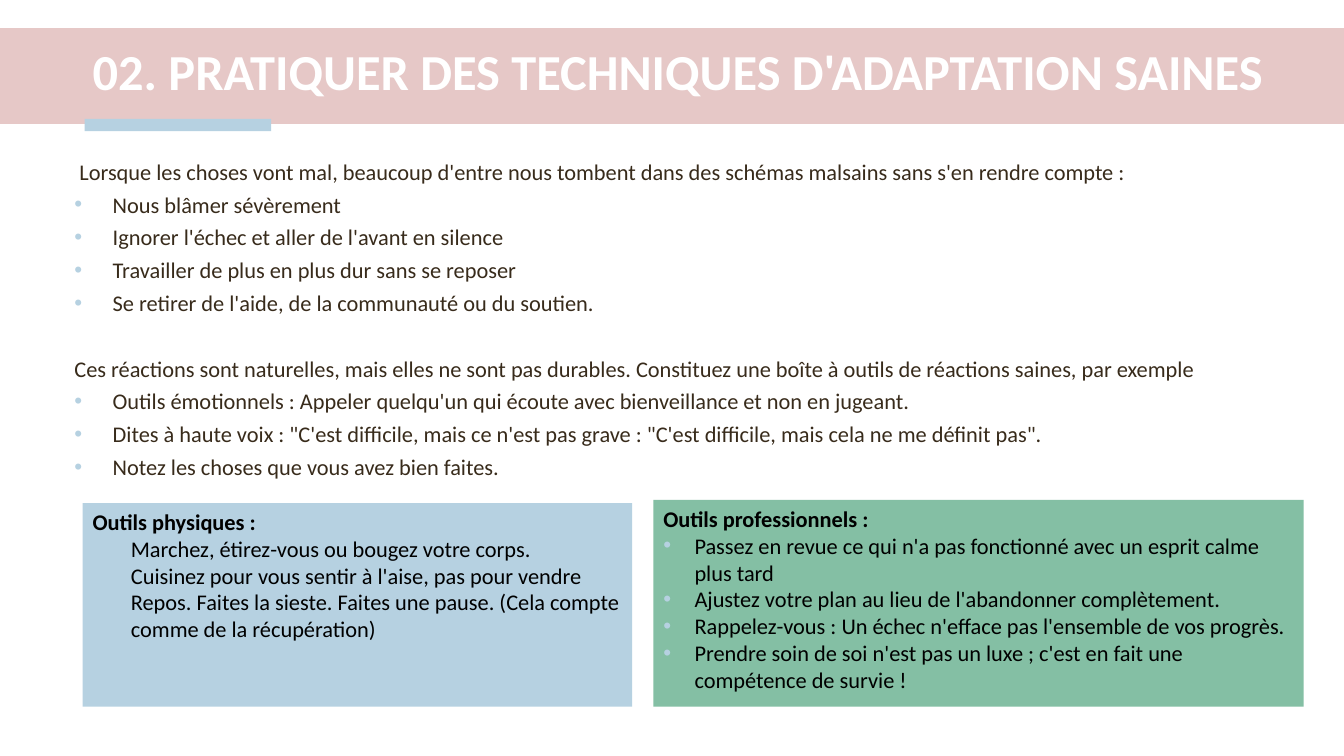
from lxml import etree
from pptx import Presentation
from pptx.dml.color import RGBColor
from pptx.enum.shapes import MSO_SHAPE
from pptx.enum.text import MSO_ANCHOR, PP_ALIGN
from pptx.oxml.ns import qn
from pptx.util import Inches, Pt

COLORS = {
    "band": "E6C8C7",
    "blue": "B6D1E1",
    "green": "84BFA4",
    "white": "FFFFFF",
    "brown": "382B1B",
    "black": "000000",
}
FONT = "Calibri"
TITLE = "02. PRATIQUER DES TECHNIQUES D'ADAPTATION SAINES"
HABITS_INTRO = "Lorsque les choses vont mal, beaucoup d'entre nous tombent dans des schémas malsains sans s'en rendre compte :"
HABITS = [
    "Nous blâmer sévèrement",
    "Ignorer l'échec et aller de l'avant en silence",
    "Travailler de plus en plus dur sans se reposer",
    "Se retirer de l'aide, de la communauté ou du soutien.",
]
TOOLS_INTRO = "Ces réactions sont naturelles, mais elles ne sont pas durables. Constituez une boîte à outils de réactions saines, par exemple"
TOOLS = [
    "Outils émotionnels : Appeler quelqu'un qui écoute avec bienveillance et non en jugeant.",
    "Dites à haute voix : \"C'est difficile, mais ce n'est pas grave : \"C'est difficile, mais cela ne me définit pas\".",
    "Notez les choses que vous avez bien faites.",
]
PHYSICAL = [
    "Marchez, étirez-vous ou bougez votre corps.",
    "Cuisinez pour vous sentir à l'aise, pas pour vendre",
    "Repos. Faites la sieste. Faites une pause. (Cela compte comme de la récupération)",
]
PROFESSIONAL = [
    "Passez en revue ce qui n'a pas fonctionné avec un esprit calme plus tard",
    "Ajustez votre plan au lieu de l'abandonner complètement.",
    "Rappelez-vous : Un échec n'efface pas l'ensemble de vos progrès.",
    "Prendre soin de soi n'est pas un luxe ; c'est en fait une compétence de survie !",
]


def add_rect(s, box, color):
    sp = s.shapes.add_shape(MSO_SHAPE.RECTANGLE, *map(Inches, box))
    sp.shadow.inherit = False
    sp.fill.solid()
    sp.fill.fore_color.rgb = RGBColor.from_string(COLORS[color])
    sp.line.fill.background()
    return sp


def add_text_box(s, box):
    tf = s.shapes.add_textbox(*map(Inches, box)).text_frame
    tf.word_wrap = True
    return tf


def add_paragraph(tf, text, color, size=16, bold=False):
    """Fill the empty first paragraph, or append a new one."""
    p = tf.add_paragraph() if tf.text else tf.paragraphs[0]
    p.text = text
    p.alignment = PP_ALIGN.LEFT
    p.font.name = FONT
    p.font.size = Pt(size)
    p.font.bold = bold
    p.font.color.rgb = RGBColor.from_string(COLORS[color])
    return p


def add_bullet(tf, text, color, indent):
    """Add a paragraph with a hanging blue bullet."""
    p = add_paragraph(tf, text, color)
    pPr = p._p.get_or_add_pPr()
    pPr.set("marL", str(Inches(indent)))
    pPr.set("indent", str(-Inches(indent)))
    bu_color = etree.Element(qn("a:buClr"))
    etree.SubElement(bu_color, qn("a:srgbClr"), val=COLORS["blue"])
    bu_font = etree.Element(qn("a:buFont"), typeface="Arial")
    bu_char = etree.Element(qn("a:buChar"), char="•")
    for position, element in enumerate((bu_color, bu_font, bu_char)):
        pPr.insert(position, element)
    return p


def add_header(s, box):
    """Full-width band with the title and a short accent bar on its lower edge."""
    left, top, width, height = box
    add_rect(s, box, "band")
    add_rect(s, (left + 0.84, top + height - 0.05, 1.85, 0.12), "blue")
    tf = add_text_box(s, (left + 0.82, top + 0.06, 11.93, 0.79))
    tf.vertical_anchor = MSO_ANCHOR.MIDDLE
    p = add_paragraph(tf, TITLE, "white", size=36, bold=True)
    p.line_spacing = 0.9


def add_body(s, box):
    tf = add_text_box(s, box)
    line = Pt(23.4)
    intro = add_paragraph(tf, HABITS_INTRO, "brown")
    intro._p.get_or_add_pPr().set("marL", str(Inches(0.05)))
    for text in HABITS:
        add_bullet(tf, text, "brown", 0.38)
    add_paragraph(tf, TOOLS_INTRO, "brown").space_before = line
    for text in TOOLS:
        add_bullet(tf, text, "brown", 0.38)
    for p in tf.paragraphs:
        p.line_spacing = line


def add_card(s, box, fill, heading, items, indent):
    tf = add_rect(s, box, fill).text_frame
    tf.word_wrap = True
    tf.vertical_anchor = MSO_ANCHOR.TOP
    add_paragraph(tf, heading, "black", bold=True)
    for text in items:
        add_bullet(tf, text, "black", indent)


def main():
    prs = Presentation()
    prs.slide_width, prs.slide_height = Inches(13.33), Inches(7.5)
    s = prs.slides.add_slide(prs.slide_layouts[6])
    add_header(s, (0, 0.28, 13.33, 0.95))
    add_body(s, (0.64, 1.46, 12.43, 4.58))
    add_card(s, (0.82, 4.99, 5.45, 2.02), "blue", "Outils physiques :", PHYSICAL, 0.38)
    add_card(s, (6.48, 4.96, 6.45, 2.05), "green", "Outils professionnels :", PROFESSIONAL, 0.31)
    prs.save("out.pptx")


if __name__ == "__main__":
    main()
